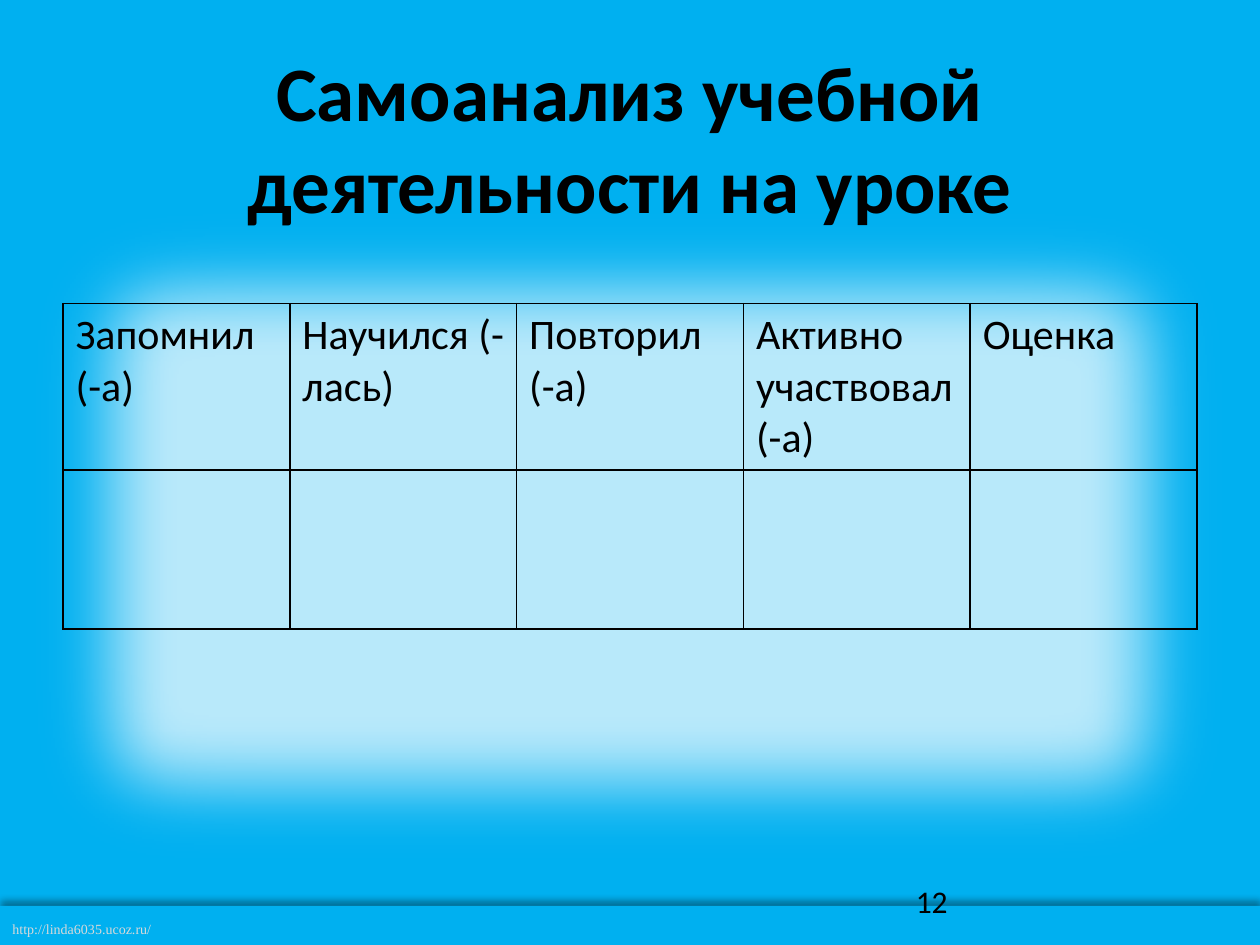
from dataclasses import dataclass

from lxml.etree import SubElement
from pptx import Presentation
from pptx.dml.color import RGBColor
from pptx.enum.shapes import MSO_SHAPE as Shape
from pptx.enum.text import MSO_ANCHOR as Anchor, MSO_AUTO_SIZE as AutoSize, PP_ALIGN as Align
from pptx.oxml import parse_xml
from pptx.oxml.ns import nsdecls, qn
from pptx.util import Emu, Inches, Pt

SKY, WHITE, BLACK, GRAY = "00B0F0", "FFFFFF", "000000", "D9D9D9"
HEADINGS = ["Запомнил (-а)", "Научился (-лась)", "Повторил (-а)", "Активно участвовал (-а)", "Оценка"]
ROWS = 2


@dataclass(frozen=True)
class Area:
    left: float
    top: float
    width: float
    height: float

    def lengths(self) -> tuple[Emu, Emu, Emu, Emu]:
        return Inches(self.left), Inches(self.top), Inches(self.width), Inches(self.height)


@dataclass(frozen=True)
class Style:
    size: float
    color: str = BLACK
    font: str = "Calibri"
    bold: bool = False


@dataclass(frozen=True)
class Band:
    area: Area
    fill: str
    effect: str
    opacity: int = 100


BANDS = [
    Band(Area(0, 7.19, 10, 0.31), SKY,
         '<a:outerShdw blurRad="50800" dist="38100" dir="16200000" rotWithShape="0">'
         '<a:srgbClr val="000000"><a:alpha val="40000"/></a:srgbClr></a:outerShdw>'),
    Band(Area(0, 1.41, 10, 5.7), WHITE, '<a:softEdge rad="635000"/>', 72),
]


def rgb(color: str) -> RGBColor:
    return RGBColor.from_string(color)


def add_run(para, text: str, style: Style) -> None:
    run = para.add_run()
    run.text = text
    font = run.font
    font.name, font.size, font.bold = style.font, Pt(style.size), style.bold
    font.color.rgb = rgb(style.color)


def add_band(page, band: Band) -> None:
    box = page.shapes.add_shape(Shape.RECTANGLE, *band.area.lengths())
    box.fill.solid()
    box.fill.fore_color.rgb = rgb(band.fill)
    box.line.fill.background()
    box.shadow.inherit = False
    properties = box._element.spPr
    color = properties.find(qn("a:solidFill"))[0]
    if band.opacity < 100:
        SubElement(color, qn("a:alpha")).set("val", str(band.opacity * 1000))
    properties.find(qn("a:effectLst")).append(
        parse_xml(band.effect.replace(" ", f" {nsdecls('a')} ", 1)))


def add_label(page, area: Area, text: str, style: Style, wrap: bool) -> None:
    frame = page.shapes.add_textbox(*area.lengths()).text_frame
    frame.word_wrap = wrap
    add_run(frame.paragraphs[0], text, style)


def set_title(page, area: Area, text: str, style: Style) -> None:
    title = page.shapes.title
    title.left, title.top, title.width, title.height = area.lengths()
    frame = title.text_frame
    frame.auto_size, frame.vertical_anchor, frame.word_wrap = AutoSize.NONE, Anchor.TOP, True
    para = frame.paragraphs[0]
    para.alignment = Align.CENTER
    add_run(para, text, style)
    page.shapes._spTree.append(title._element)


def format_cell(cell) -> None:
    properties = cell._tc.get_or_add_tcPr()
    for side in ("lnL", "lnR", "lnT", "lnB"):
        properties.append(parse_xml(
            f'<a:{side} {nsdecls("a")} w="12700"><a:solidFill>'
            f'<a:srgbClr val="{BLACK}"/></a:solidFill></a:{side}>'))
    cell.fill.background()


def add_grid(page, area: Area, headings: list[str], style: Style) -> None:
    table = page.shapes.add_table(ROWS, len(headings), *area.lengths()).table
    table.first_row = table.horz_banding = False
    for cell in table.iter_cells():
        format_cell(cell)
    for column, heading in enumerate(headings):
        add_run(table.cell(0, column).text_frame.paragraphs[0], heading, style)


def main() -> None:
    deck = Presentation()
    deck.slide_width, deck.slide_height = Inches(10), Inches(7.5)
    page = deck.slides.add_slide(deck.slide_layouts[5])
    page.background.fill.solid()
    page.background.fill.fore_color.rgb = rgb(SKY)
    for band in BANDS:
        add_band(page, band)
    add_label(page, Area(0, 7.26, 1.31, 0.24), "http://linda6035.ucoz.ru/",
              Style(8, GRAY, "Times New Roman"), False)
    set_title(page, Area(0.5, 0.3, 9, 1.25), "Самоанализ учебной деятельности на уроке",
              Style(44, bold=True))
    add_grid(page, Area(0.5, 2.41, 9, 2.52), HEADINGS, Style(24))
    add_label(page, Area(7.17, 6.95, 2.33, 0.4), "12", Style(18), True)
    deck.save("out.pptx")


if __name__ == "__main__":
    main()
